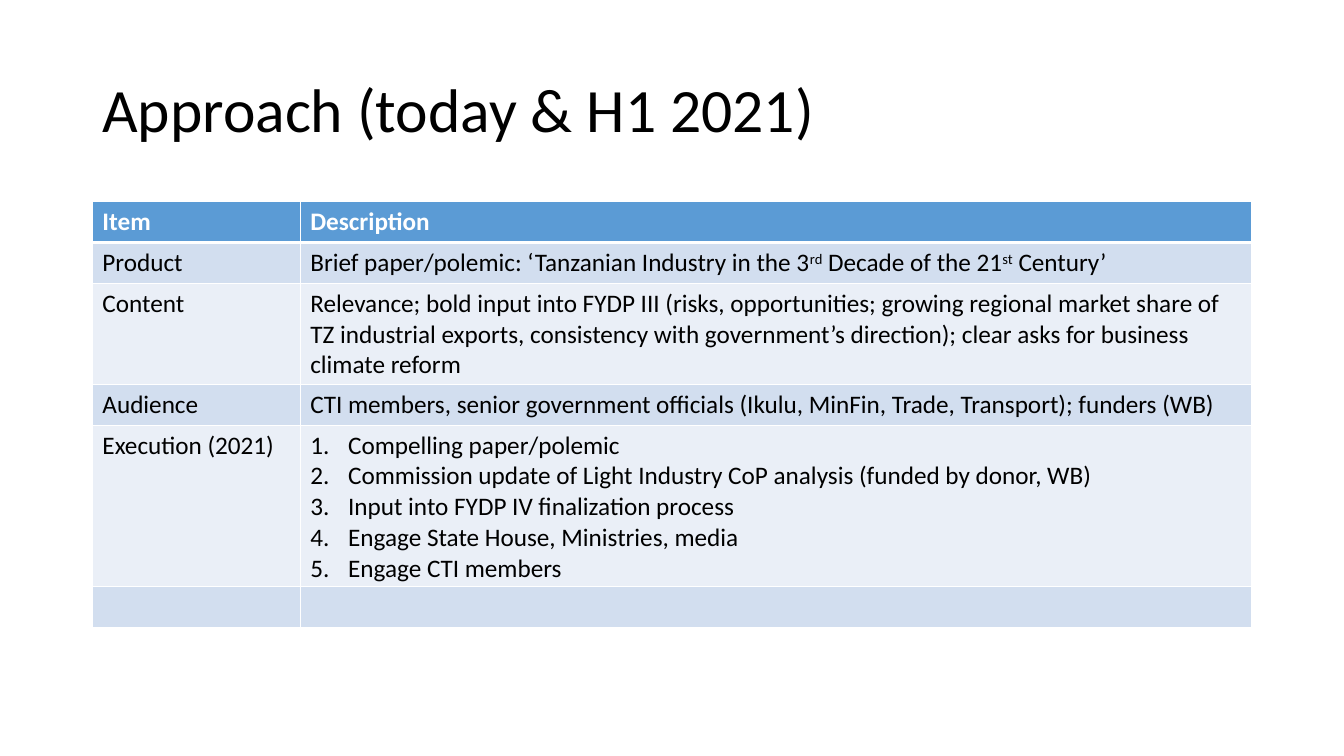
from pptx import Presentation
from pptx.dml.color import RGBColor
from pptx.enum.text import MSO_ANCHOR
from pptx.oxml.ns import qn
from pptx.util import Pt
from lxml.etree import SubElement

PX = 9525  # EMU per px, 96 px to the inch
FONT = "Calibri"
BLACK, WHITE = "000000", "FFFFFF"
HEAD, BANDS = "5B9BD5", ("D2DEEF", "EAEFF7")

TITLE = "Approach (today & H1 2021)"
# A caret on each side marks superscript; a list is numbered.
ROWS = [
    ("Item", "Description"),
    ("Product", "Brief paper/polemic: ‘Tanzanian Industry in the 3^rd^ Decade "
                "of the 21^st^ Century’"),
    ("Content", "Relevance; bold input into FYDP III (risks, opportunities; "
                "growing regional market share of TZ industrial exports, "
                "consistency with government’s direction); clear asks for "
                "business climate reform"),
    ("Audience", "CTI members, senior government officials (Ikulu, MinFin, "
                 "Trade, Transport); funders (WB)"),
    ("Execution (2021)", [
        "Compelling paper/polemic",
        "Commission update of Light Industry CoP analysis (funded by donor, WB)",
        "Input into FYDP IV finalization process",
        "Engage State House, Ministries, media",
        "Engage CTI members",
    ]),
    ("", ""),
]


def px(*nums):
    return [n * PX for n in nums]


def color(code):
    return RGBColor.from_string(code)


def style(font, code, **form):
    for key, val in {"name": FONT, **form}.items():
        setattr(font, key, val)
    font.color.rgb = color(code)


def number(para):
    """Give a paragraph an automatic number and hanging indent."""
    props = para._p.get_or_add_pPr()
    for key, val in {"marL": 36 * PX, "indent": -36 * PX}.items():
        props.set(key, str(val))
    SubElement(props, qn("a:buFont"), typeface="+mj-lt")
    SubElement(props, qn("a:buAutoNum"), type="arabicPeriod")


def write(para, text, code, **form):
    """Add runs, raising each piece between carets."""
    style(para.font, code, **form)
    for i, piece in enumerate(text.split("^")):
        if piece:
            run = para.add_run()
            run.text = piece
            style(run.font, code, **form)
            if i % 2:
                run._r.get_or_add_rPr().set("baseline", "30000")


def border(cell, widths):
    props = cell._tc.get_or_add_tcPr()
    for side, width in widths.items():
        line = SubElement(props, qn("a:ln" + side), w=str(Pt(width)))
        fill = SubElement(line, qn("a:solidFill"))
        SubElement(fill, qn("a:srgbClr"), val=WHITE)


def title(slide, box):
    frame = slide.shapes.add_textbox(*px(*box)).text_frame
    form = {"word_wrap": True, "vertical_anchor": MSO_ANCHOR.MIDDLE}
    for key, val in form.items():
        setattr(frame, key, val)
    para = frame.paragraphs[0]
    para.line_spacing = 0.9
    write(para, TITLE, BLACK, size=Pt(44))


def grid(slide, box):
    left, top, wide, high = box
    first = 198
    table = slide.shapes.add_table(len(ROWS), 2, *px(*box)).table
    for col, width in zip(table.columns, px(first, wide - first)):
        col.width = width
    for r, texts in enumerate(ROWS):
        table.rows[r].height = high // len(ROWS) * PX
        for c, text in enumerate(texts):
            cell = table.cell(r, c)
            # Lines and fill
            border(cell, {"L": 1, "R": 1, "T": 3 if r == 1 else 1,
                          "B": 1 if r else 3})
            cell.fill.solid()
            cell.fill.fore_color.rgb = color(BANDS[(r - 1) % 2] if r else HEAD)
            # Text
            frame = cell.text_frame
            steps = isinstance(text, list)
            for i, line in enumerate(text if steps else [text]):
                para = frame.add_paragraph() if i else frame.paragraphs[0]
                if steps:
                    number(para)
                write(para, line, BLACK if r else WHITE,
                      size=Pt(18), bold=r == 0)


def main():
    deck = Presentation()
    deck.slide_width, deck.slide_height = px(1280, 720)
    slide = deck.slides.add_slide(deck.slide_layouts[6])
    title(slide, (88, 38, 1104, 139))
    grid(slide, (88, 192, 1104, 234))
    deck.save("out.pptx")


if __name__ == "__main__":
    main()
